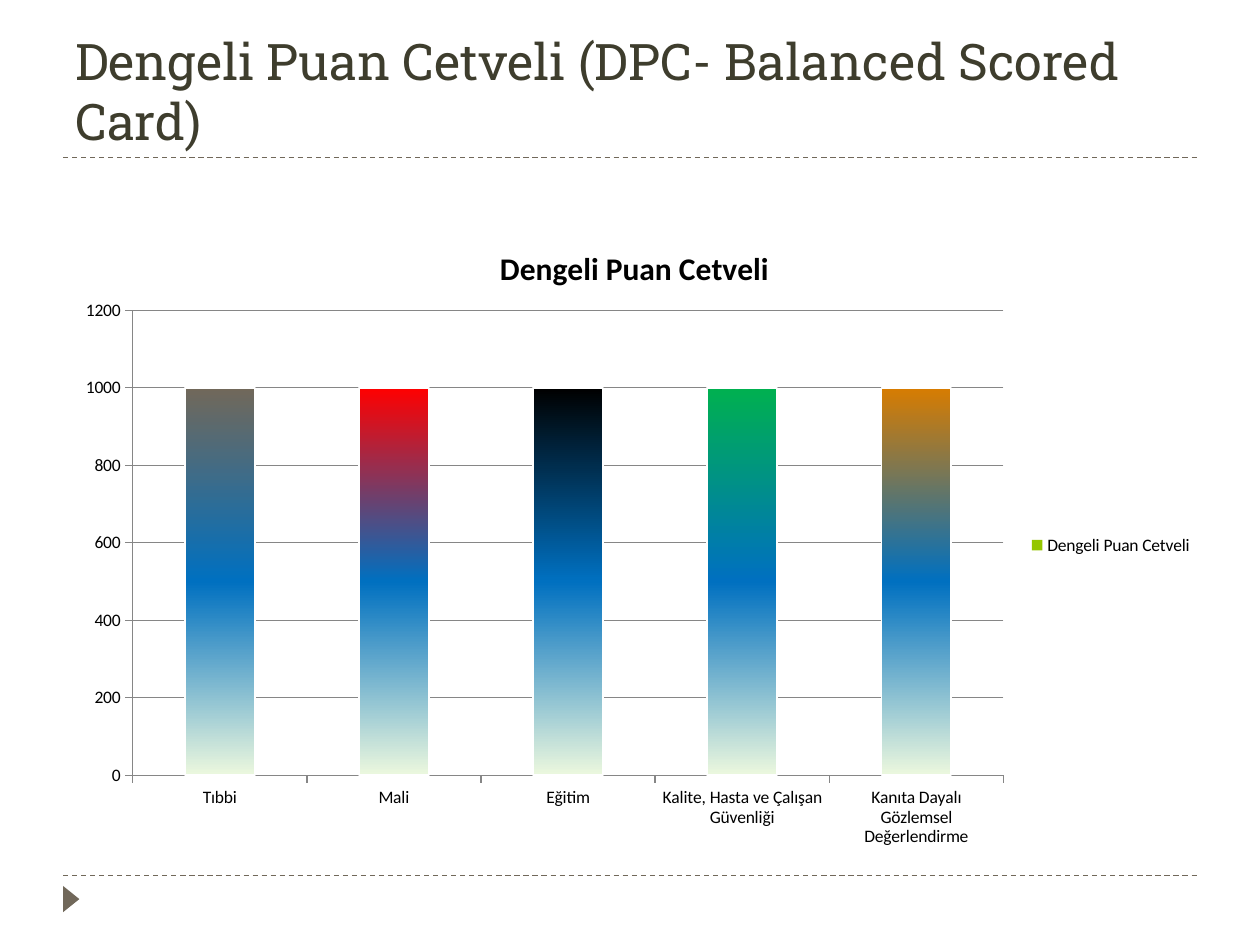
from pptx import Presentation
from pptx.chart.data import CategoryChartData
from pptx.dml.color import RGBColor
from pptx.enum.chart import XL_CHART_TYPE as ChartType, XL_LEGEND_POSITION as LegendPosition
from pptx.enum.chart import XL_TICK_MARK as TickMark
from pptx.enum.dml import MSO_LINE_DASH_STYLE as Dash
from pptx.enum.shapes import MSO_CONNECTOR as Connector, MSO_SHAPE as Shape
from pptx.enum.text import MSO_ANCHOR as Anchor
from pptx.oxml import parse_xml
from pptx.oxml.ns import nsdecls
from pptx.util import Cm, Pt

BROWN = "71685A"
AXIS_GREY = "868686"
SCORECARD = "Dengeli Puan Cetveli"
# Category, value and top colour of each column
COLUMNS = [
    ("Tıbbi", 1000, BROWN),
    ("Mali", 1000, "FF0000"),
    ("Eğitim", 1000, "000000"),
    ("Kalite, Hasta ve Çalışan Güvenliği", 1000, "00B050"),
    ("Kanıta Dayalı Gözlemsel Değerlendirme", 1000, "D77C01"),
]


def color(hex_text):
    return RGBColor.from_string(hex_text)


def style_font(font, name, size, hex_text, bold=False):
    font.name = name
    font.size = Pt(size)
    font.bold = bold
    font.color.rgb = color(hex_text)


def style_line(line, hex_text, width=0.75):
    line.color.rgb = color(hex_text)
    line.width = Pt(width)


def add_dashed_rule(page, top):
    rule = page.shapes.add_connector(
        Connector.STRAIGHT, Cm(1.27), Cm(top), Cm(24.13), Cm(top))
    style_line(rule.line, BROWN)
    rule.line.dash_style = Dash.DASH
    rule._element.spPr.append(parse_xml(f"<a:effectLst {nsdecls('a')}/>"))


def add_page_marker(page):
    marker = page.shapes.add_shape(
        Shape.ISOSCELES_TRIANGLE, Cm(1.17), Cm(17.96), Cm(0.53), Cm(0.33))
    marker.rotation = 90
    marker.shadow.inherit = False
    marker.fill.solid()
    marker.fill.fore_color.rgb = color(BROWN)
    marker.line.fill.background()


def add_title(page, text):
    box = page.shapes.add_textbox(Cm(1.27), Cm(0.43), Cm(22.86), Cm(2.74))
    frame = box.text_frame
    frame.word_wrap = True
    frame.vertical_anchor = Anchor.BOTTOM
    frame.text = text
    style_font(frame.paragraphs[0].runs[0].font, "Roboto Slab", 28.8, "3E3D2D")


def fill_column(series, index, top_color):
    """Fill one column with a three-stop gradient from top to bottom."""
    stops = "".join(
        f'<a:gs pos="{pos * 1000}"><a:srgbClr val="{stop}"/></a:gs>'
        for pos, stop in ((0, top_color), (50, "0070C0"), (100, "ECF8DE")))
    gradient = parse_xml(
        f'<a:gradFill {nsdecls("a")} rotWithShape="1"><a:gsLst>{stops}</a:gsLst>'
        '<a:lin ang="5400000" scaled="0"/></a:gradFill>')
    style_line(series.points[index].format.line, "FFFFFF", 1)
    point = series._element.get_or_add_dPt_for_point(index)
    point.get_or_add_spPr().insert(0, gradient)


def style_axes(chart):
    values = chart.value_axis
    values.minimum_scale, values.maximum_scale, values.major_unit = 0, 1200, 200
    values.has_major_gridlines = True
    style_line(values.major_gridlines.format.line, AXIS_GREY)
    for axis in (chart.category_axis, values):
        axis.major_tick_mark = TickMark.OUTSIDE
        axis.minor_tick_mark = TickMark.NONE
        style_line(axis.format.line, AXIS_GREY)


def add_score_chart(page):
    data = CategoryChartData()
    data.categories = [name for name, _, _ in COLUMNS]
    data.add_series(SCORECARD, [value for _, value, _ in COLUMNS])
    chart = page.shapes.add_chart(
        ChartType.COLUMN_CLUSTERED, Cm(1.27), Cm(4.45), Cm(23.04), Cm(13.08), data).chart
    style_font(chart.font, "Calibri", 10, "000000")

    # Title and legend
    chart.has_title = True
    frame = chart.chart_title.text_frame
    frame.text = SCORECARD
    style_font(frame.paragraphs[0].runs[0].font, "Calibri", 18, "000000", bold=True)
    chart.chart_title.include_in_layout = False
    chart.has_legend = True
    chart.legend.position = LegendPosition.RIGHT
    chart.legend.include_in_layout = False

    # Axes and columns
    style_axes(chart)
    plot = chart.plots[0]
    plot.gap_width = 150
    plot.vary_by_categories = False
    series = plot.series[0]
    series.format.fill.solid()
    series.format.fill.fore_color.rgb = color("94C600")
    for index, (_, _, top_color) in enumerate(COLUMNS):
        fill_column(series, index, top_color)


def main():
    deck = Presentation()
    deck.slide_width, deck.slide_height = Cm(25.4), Cm(19.05)
    page = deck.slides.add_slide(deck.slide_layouts[6])

    # Frame of the page
    for top in (17.65, 3.18):
        add_dashed_rule(page, top)
    add_page_marker(page)

    # Content
    add_title(page, "Dengeli Puan Cetveli (DPC- Balanced Scored Card)")
    add_score_chart(page)
    deck.save("out.pptx")


if __name__ == "__main__":
    main()
